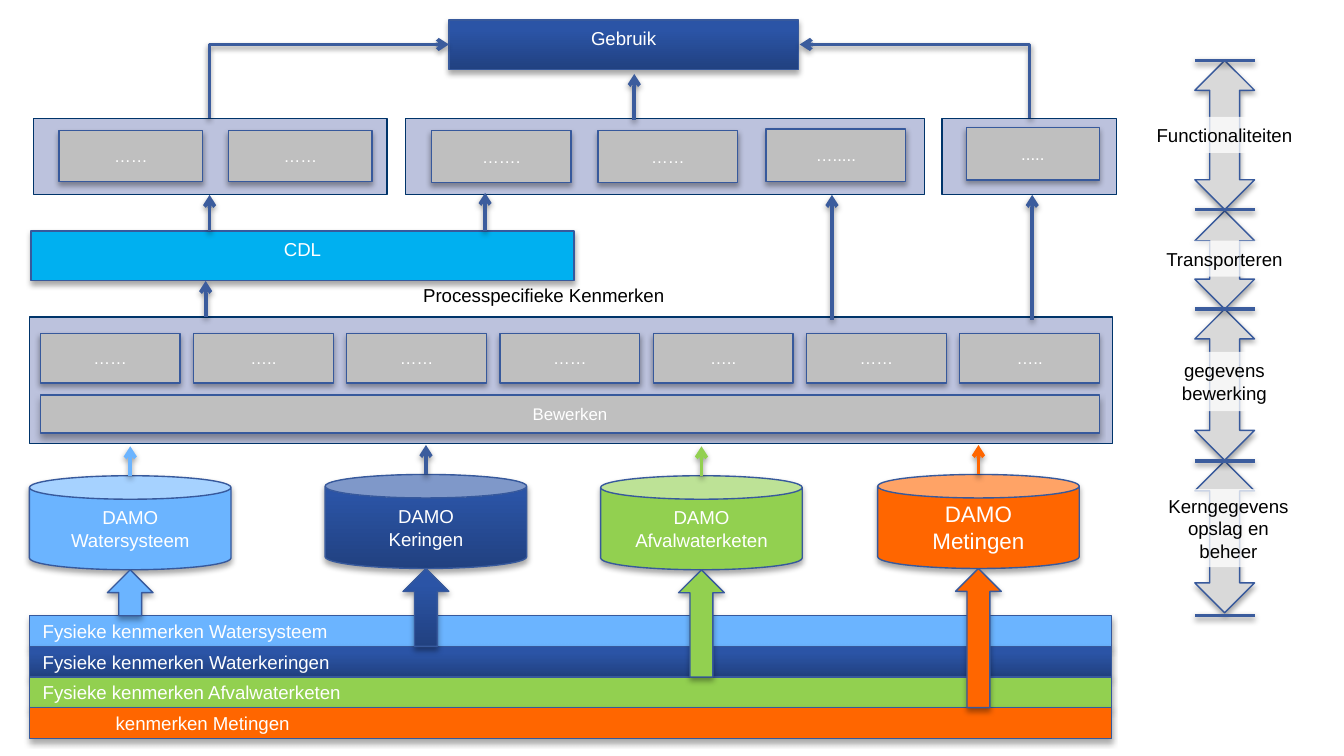
import pptx
import pptx.util
import pptx.dml.color
import pptx.enum.shapes
import pptx.enum.text
import pptx.oxml
import pptx.oxml.ns

Pt = pptx.util.Pt
SHAPE = pptx.enum.shapes.MSO_SHAPE
CONNECTOR = pptx.enum.shapes.MSO_CONNECTOR
ALIGN = pptx.enum.text.PP_ALIGN
ANCHOR = pptx.enum.text.MSO_ANCHOR

COLORS = {
    "water": "6BB4FF", "dark": "214180", "dark_top": "2B54A6",
    "green": "92D050", "orange": "FF6600", "cyan": "00B0F0",
    "panel": "BCC2DD", "panel_line": "00346A", "box": "BFBFBF",
    "outline": "37599C", "arrow": "3B5C9D", "scale": "D9D9D9",
    "white": "FFFFFF", "black": "000000",
}

# Content: all places are left, top, width, height in points
PANELS = [(15.8, 169.9, 580.3, 67.7), (18, 63.4, 189.4, 41),
          (217.4, 63.4, 277.9, 41), (504.7, 63.4, 93.6, 41)]
TOP_BOXES = [
    ("……", 31.7, 69.8, 77, 27.4), ("……", 122.4, 69.8, 77, 27.4),
    ("…….", 231.1, 69.8, 74.9, 28.1), ("……", 320.4, 69.8, 74.9, 28.1),
    ("….....", 410.4, 69.1, 74.9, 28.1), (".....", 517.7, 68.4, 71.3, 28.1),
]
PROCESS_BOXES = ["……", "…..", "……", "……", "…..", "……", "….."]
PROCESS_LEFT, PROCESS_PITCH = 21.6, 82.1

# Stores: text lines, colour, can left, can top, text size
STORES = [
    (["DAMO", "Watersysteem"], "water", 15.8, 254.9, 10),
    (["DAMO", "Keringen"], "dark", 174.2, 254.2, 10),
    (["DAMO", "Afvalwaterketen"], "green", 321.8, 254.9, 10),
    (["DAMO", "Metingen"], "orange", 470.2, 254.2, 12),
]
CAN_WIDTH, CAN_HEIGHT, BLOCK_ARROW_WIDTH = 108, 50.4, 24.5

# Source bars: text, extra indent
BARS = [("Fysieke kenmerken Watersysteem", 0),
        ("Fysieke kenmerken Waterkeringen", 0),
        ("Fysieke kenmerken Afvalwaterketen", 0),
        ("kenmerken Metingen", 39)]
BARS_TOP, BAR_HEIGHT = 329.9, 16.4

# Vertical arrows: x, start y, end y
FLOWS = [(112.3, 123.8, 104.4), (259.9, 123.8, 103.3), (339.8, 64.4, 39.6),
         (110.2, 169.9, 150.5), (445.7, 171.4, 104.4), (553, 171.4, 104.4)]
# Elbows beside the use box: x at the box, x of the panel
ELBOWS = [(428.4, 551.5), (240.5, 112.3)]

# Layer scale: text lines, top, bottom, label left, top, width, height
LAYERS = [
    (["Functionaliteiten"], 32.4, 112.3, 612, 62.6, 87.8, 19.4),
    (["Transporteren"], 113, 165.6, 617, 128.9, 77.8, 19.4),
    (["gegevens", "bewerking"], 165.6, 246.6, 625.7, 188.6, 60.5, 31.7),
    (["Kerngegevens", "opslag en", "beheer"], 247, 328.3, 618.5, 262.1, 79.2, 41.8),
]
SCALE_LEFT, SCALE_WIDTH = 640.1, 32
SCALE_TICKS = [32.4, 112.3, 165.6, 247, 329.8]


def rgb(name):
    return pptx.dml.color.RGBColor.from_string(COLORS[name])


def xml(tag, attributes="", inner=""):
    return pptx.oxml.parse_xml(
        f'<a:{tag} {pptx.oxml.ns.nsdecls("a")} {attributes}>{inner}</a:{tag}>')


def add_shadow(item, opacity, distance):
    item._element.spPr.append(xml("effectLst", inner=(
        f'<a:outerShdw blurRad="{Pt(3.1)}" dist="{Pt(distance)}" dir="5400000" rotWithShape="0">'
        f'<a:srgbClr val="{COLORS["black"]}"><a:alpha val="{opacity * 1000}"/></a:srgbClr>'
        '</a:outerShdw>')))


def paint(shape, color):
    if color != "dark":
        shape.fill.solid()
        shape.fill.fore_color.rgb = rgb(color)
        return
    shape.fill.gradient()
    shape.fill.gradient_angle = 90
    for stop, (position, name) in zip(shape.fill.gradient_stops,
                                      [(0, "dark"), (0.8, "dark_top")]):
        stop.position = position
        stop.color.rgb = rgb(name)


def add_block(kind, place, color, lines=(), size=10, align=ALIGN.CENTER,
              anchor=ANCHOR.MIDDLE, line="outline", shadow=True,
              text_color="white", wrap=True, indent=0):
    shape = slide.shapes.add_shape(kind, *[Pt(value) for value in place])
    paint(shape, color)
    if line:
        shape.line.color.rgb = rgb(line)
        shape.line.width = Pt(0.75)
    else:
        shape.line.fill.background()
    if shadow:
        add_shadow(shape, 35, 1.8)
    else:
        shape.shadow.inherit = False
    frame = shape.text_frame
    frame.word_wrap = wrap
    frame.vertical_anchor = anchor
    frame.margin_left = Pt(7.2 + indent)
    for index, text in enumerate(lines):
        paragraph = frame.add_paragraph() if index else frame.paragraphs[0]
        paragraph.alignment = align
        run = paragraph.add_run()
        run.text = text
        run.font.name = "Arial"
        run.font.size = Pt(size)
        run.font.color.rgb = rgb(text_color)
    return shape


def add_line(x1, y1, x2, y2, color="arrow", arrow_end=None, kind=CONNECTOR.STRAIGHT):
    connector = slide.shapes.add_connector(kind, Pt(x1), Pt(y1), Pt(x2), Pt(y2))
    connector.line.color.rgb = rgb(color)
    connector.line.width = Pt(2)
    if arrow_end:
        connector.line._get_or_add_ln().append(xml(arrow_end, 'type="arrow"'))
    add_shadow(connector, 38, 1.6)
    return connector


presentation = pptx.Presentation()
presentation.slide_width = Pt(720)
presentation.slide_height = Pt(405)
slide = presentation.slides.add_slide(presentation.slide_layouts[6])

# Use, delivery and panels
add_block(SHAPE.RECTANGLE, (240.5, 10.8, 187.2, 26.6), "dark", ["Gebruik"], anchor=ANCHOR.TOP)
for panel in PANELS:
    add_block(SHAPE.RECTANGLE, panel, "panel", line="panel_line", shadow=False)
add_block(SHAPE.RECTANGLE, (16.6, 123.8, 290.9, 26.6), "cyan", ["CDL"], anchor=ANCHOR.TOP)

# Grey boxes
process_boxes = [(text, PROCESS_LEFT + index * PROCESS_PITCH, 178.6, 74.9, 26.6)
                 for index, text in enumerate(PROCESS_BOXES)]
work_bar = ("Bewerken", PROCESS_LEFT, 211.7, 567.4, 20.2)
for text, *place in TOP_BOXES + process_boxes + [work_bar]:
    add_block(SHAPE.RECTANGLE, place, "box", [text], size=9)

# Caption
caption = slide.shapes.add_textbox(Pt(219.6), Pt(148.3), Pt(144.7), Pt(19.4))
caption.text_frame.word_wrap = False
run = caption.text_frame.paragraphs[0].add_run()
run.text = "Processpecifieke Kenmerken"
run.font.name = "Arial"
run.font.size = Pt(10)
run.font.color.rgb = rgb("black")

# Flows
for x, start, end in FLOWS:
    add_line(x, start, x, end, arrow_end="tailEnd")
for box_x, panel_x in ELBOWS:
    elbow = add_line(box_x, 23.8, panel_x, 63.4, arrow_end="headEnd", kind=CONNECTOR.ELBOW)
    elbow._element.spPr.find(pptx.oxml.ns.qn("a:prstGeom")).set("prst", "bentConnector2")

# Source bars
for index, ((text, indent), store) in enumerate(zip(BARS, STORES)):
    add_block(SHAPE.RECTANGLE, (15.8, BARS_TOP + index * BAR_HEIGHT, 579.6, BAR_HEIGHT),
              store[1], [text], align=ALIGN.LEFT, indent=indent)

# Stores with the arrows below and above them
for index, (lines, color, left, top, size) in enumerate(STORES):
    center = left + CAN_WIDTH / 2
    bottom = top + CAN_HEIGHT
    add_block(SHAPE.CAN, (left, top, CAN_WIDTH, CAN_HEIGHT), color, lines, size)
    add_block(SHAPE.UP_ARROW, (center - BLOCK_ARROW_WIDTH / 2, bottom, BLOCK_ARROW_WIDTH,
                               BARS_TOP + index * BAR_HEIGHT - bottom), color)
    add_line(center, top, center, top - 15.8, "arrow" if color == "dark" else color, "tailEnd")

# Layer scale
for lines, top, bottom, *label in LAYERS:
    add_block(SHAPE.UP_DOWN_ARROW, (SCALE_LEFT, top, SCALE_WIDTH, bottom - top), "scale")
    veil = add_block(SHAPE.RECTANGLE, label, "white", lines, line=None, shadow=False,
                     text_color="black", wrap=False)
    veil.fill._xPr.find(pptx.oxml.ns.qn("a:solidFill"))[0].append(xml("alpha", 'val="75000"'))
for y in SCALE_TICKS:
    add_line(SCALE_LEFT, y, SCALE_LEFT + SCALE_WIDTH, y)

presentation.save("out.pptx")
